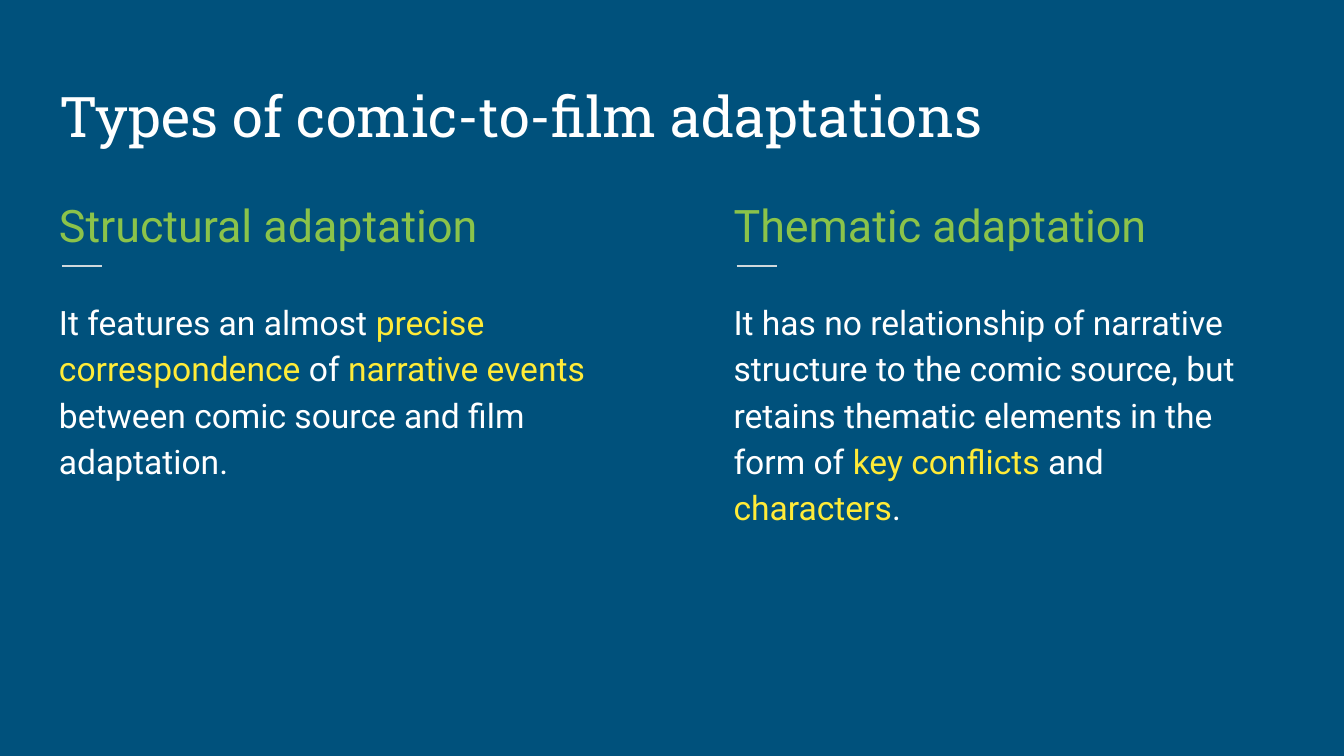
from lxml.etree import SubElement
from pptx import Presentation
from pptx.dml.color import RGBColor
from pptx.enum.shapes import MSO_CONNECTOR
from pptx.enum.text import MSO_ANCHOR, MSO_AUTO_SIZE, PP_ALIGN
from pptx.oxml.ns import qn
from pptx.util import Inches, Pt

BLUE = RGBColor(0x00, 0x51, 0x7C)
WHITE = RGBColor(0xFF, 0xFF, 0xFF)
GREEN = RGBColor(0x8B, 0xC3, 0x4A)
YELLOW = RGBColor(0xFF, 0xEB, 0x38)
GREY = RGBColor(0xCF, 0xD8, 0xDC)


def set_frame(frame, anchor):
    frame.word_wrap = True
    frame.auto_size = MSO_AUTO_SIZE.NONE
    frame.vertical_anchor = anchor
    frame.margin_left = frame.margin_right = Inches(0.1)
    frame.margin_top = frame.margin_bottom = Inches(0.1)


def write_runs(paragraph, runs, size, font_name):
    paragraph.alignment = PP_ALIGN.LEFT
    for text, color in runs:
        run = paragraph.add_run()
        run.text = text
        run.font.size = Pt(size)
        run.font.name = font_name
        run.font.color.rgb = color


# Widescreen 16:9 slide
presentation = Presentation()
presentation.slide_width = Inches(10)
presentation.slide_height = Inches(10) * 9 // 16
slide = presentation.slides.add_slide(presentation.slide_layouts[5])
slide.background.fill.solid()
slide.background.fill.fore_color.rgb = BLUE

# Title
title = slide.shapes.title
title.left, title.top = Inches(0.34), Inches(0.41)
title.width, title.height = Inches(9.32), Inches(0.8)
set_frame(title.text_frame, MSO_ANCHOR.BOTTOM)
write_runs(title.text_frame.paragraphs[0],
           [("Types of comic-to-film adaptations", WHITE)], 30, "Roboto Slab")

# One column per adaptation type: left edge, heading width, heading, description
adaptations = [
    (0.34, 4.81, "Structural adaptation", [
        ("It features an almost ", WHITE),
        ("precise correspondence", YELLOW),
        (" of ", WHITE),
        ("narrative events", YELLOW),
        (" between comic source and film adaptation.", WHITE),
    ]),
    (5.36, 4.21, "Thematic adaptation", [
        ("It has no relationship of narrative structure to the comic source, "
         "but retains thematic elements in the form of ", WHITE),
        ("key conflicts", YELLOW),
        (" and ", WHITE),
        ("characters", YELLOW),
        (".", WHITE),
    ]),
]

for left, heading_width, heading, description in adaptations:
    # Heading and description
    for top, width, height, runs, size in [
        (1.31, heading_width, 0.57, [(heading, GREEN)], 24),
        (2.1, 4.21, 3.01, description, 18),
    ]:
        box = slide.shapes.add_textbox(
            Inches(left), Inches(top), Inches(width), Inches(height))
        set_frame(box.text_frame, MSO_ANCHOR.TOP)
        paragraph = box.text_frame.paragraphs[0]
        paragraph.line_spacing = 1.15
        paragraph.space_after = Pt(16)
        write_runs(paragraph, runs, size, "Roboto")

    # Short rule under the heading
    rule = slide.shapes.add_connector(
        MSO_CONNECTOR.STRAIGHT, Inches(left + 0.12), Inches(1.98),
        Inches(left + 0.42), Inches(1.98))
    rule.line.color.rgb = GREY
    rule.line.width = Pt(0.75)
    SubElement(rule._element.spPr, qn("a:effectLst"))

presentation.save("out.pptx")
